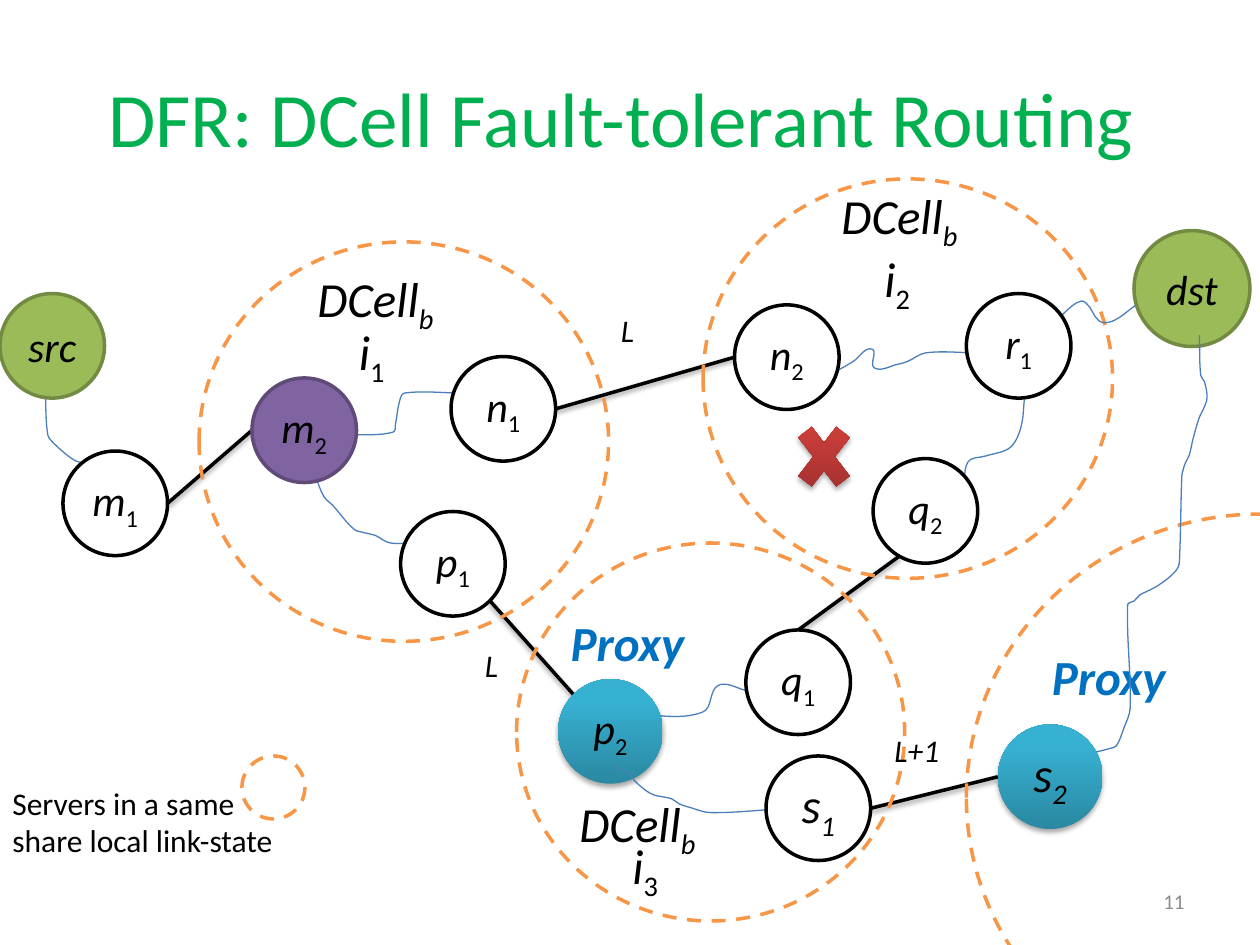
from collections import namedtuple
from math import cos, dist, hypot, radians, sin

from lxml.etree import SubElement
from pptx import Presentation
from pptx.dml.color import RGBColor
from pptx.enum.dml import MSO_LINE_DASH_STYLE as Dash
from pptx.enum.shapes import MSO_CONNECTOR as Connector, MSO_SHAPE as Preset
from pptx.enum.text import MSO_ANCHOR as Anchor, MSO_AUTO_SIZE as AutoSize, PP_ALIGN as Align
from pptx.oxml.ns import qn
from pptx.util import Inches, Pt

Box = namedtuple("Box", "left top width height")
Node = namedtuple("Node", "left top size letter sub style")

COLORS = {
    "title": "00B050", "text": "000000", "proxy": "0070C0", "number": "8C8C8C",
    "ring": "F79646", "route": "4B7EBC", "white": "FFFFFF", "black": "000000",
    "green": "9BBB59", "green_edge": "738A42", "purple": "8064A2", "purple_edge": "5F4A78",
    "teal_low": "2A88A2", "teal_high": "37B1D2", "red_low": "9C2F2D", "red_high": "CB3E3A",
}
STYLES = {
    "plain": ("white", "black"),
    "end": ("green", "green_edge"),
    "fault": ("purple", "purple_edge"),
}
D = 0.83
NODES = {
    "src": Node(0, 2.33, D, "src", "", "end"),
    "dst": Node(9, 1.83, 0.92, "dst", "", "end"),
    "m1": Node(0.5, 3.58, D, "m", "1", "plain"),
    "m2": Node(2, 3, D, "m", "2", "fault"),
    "n1": Node(3.58, 2.83, D, "n", "1", "plain"),
    "n2": Node(5.83, 2.42, D, "n", "2", "plain"),
    "p1": Node(3.18, 4.06, D, "p", "1", "plain"),
    "p2": Node(4.43, 5.39, D, "p", "2", "proxy"),
    "q1": Node(5.92, 5, D, "q", "1", "plain"),
    "q2": Node(6.93, 3.64, D, "q", "2", "plain"),
    "r1": Node(7.67, 2.33, D, "r", "1", "plain"),
    "s1": Node(6.08, 6, D, "s", "1", "plain"),
    "s2": Node(7.92, 5.75, D, "s", "2", "proxy"),
}
LINKS = [
    ("n1", 0, "n2", 180), ("q2", 120, "q1", 270), ("p1", 45, "p2", 225),
    ("m1", 0, "m2", 180), ("s1", 0, "s2", 180),
]
RINGS = [(4.1, 4.31, 3.08, 3), (1.58, 1.92, 3.25, 3.17),
         (5.58, 1.42, 3.25, 3.17), (7.67, 4.08, 4.67, 4.5)]
ROUTES = [
    [(2.5, 3.77), (2.57, 3.94), (2.64, 4.01), (2.81, 4.2), (2.9, 4.23), (2.98, 4.25),
     (3.1, 4.31), (3.4, 4.3)],
    [(7.39, 4.17), (7.61, 4.02), (7.65, 3.95), (7.68, 3.67), (7.82, 3.62), (7.99, 3.57),
     (8.06, 3.5), (8.11, 3.36), (8.13, 3.17)],
    [(4.92, 5.58), (5.13, 5.67), (5.58, 5.65), (5.7, 5.44), (5.92, 5.48), (6.11, 5.53),
     (6.37, 5.48)],
    [(0.36, 3.1), (0.38, 3.45), (0.43, 3.52), (0.57, 3.64), (0.64, 3.67), (0.86, 3.69)],
    [(2.55, 3.31), (2.74, 3.43), (2.81, 3.45), (3.12, 3.43), (3.14, 3.36), (3.17, 3.19),
     (3.21, 3.12), (3.67, 3.12)],
    [(6.56, 2.99), (6.77, 2.87), (6.92, 2.77), (6.94, 2.92), (7.13, 2.89), (7.2, 2.87),
     (7.35, 2.8), (7.75, 2.8)],
    [(8.23, 2.73), (8.25, 2.65), (8.39, 2.56), (8.44, 2.49), (8.58, 2.39), (8.65, 2.44),
     (8.69, 2.51), (8.75, 2.56), (8.85, 2.54), (8.99, 2.44), (9.08, 2.37)],
]
PROXY_ROUTES = [
    [(4.88, 6.08), (5, 6.14), (5.03, 6.19), (5.12, 6.27), (5.19, 6.31), (5.33, 6.34),
     (5.39, 6.38), (5.48, 6.41), (5.64, 6.45), (6.2, 6.42)],
    [(8.42, 6.08), (8.48, 6.03), (8.81, 5.94), (8.86, 5.92), (8.92, 5.78), (8.97, 5.62),
     (8.95, 4.8), (9, 4.77), (9.05, 4.72), (9.09, 4.7), (9.17, 4.66), (9.27, 4.59),
     (9.34, 4.52), (9.36, 4.47), (9.38, 3.78), (9.39, 3.73), (9.41, 3.67), (9.44, 3.61),
     (9.47, 3.48), (9.52, 3.31), (9.55, 3.25), (9.58, 3.16), (9.56, 3.03), (9.53, 2.98),
     (9.52, 2.66)],
]
CELL_LABELS = [((2.42, 2.08), (2.75, 2.5), "1"), ((6.58, 1.42), (6.92, 1.92), "2"),
               ((4.5, 6.25), (4.92, 6.58), "3")]
LEVEL_LABELS = [(4.83, 2.42, 0.42, "L"), (3.75, 5.08, 0.42, "L"), (7, 5.75, 0.92, "L+1")]


def rgb(name):
    return RGBColor.from_string(COLORS[name])


def place(box, left, top, width, height):
    return [Inches(n) for n in (box.left + left, box.top + top, width, height)]


def write(para, parts, size, color="text", bold=False, align=Align.LEFT):
    para.alignment = align
    for text, italic, lowered in parts:
        span = para.add_run()
        span.text = text
        span.font.name = "Calibri"
        span.font.size = Pt(size)
        span.font.bold = bold
        span.font.italic = italic
        span.font.color.rgb = rgb(color)
        if lowered:
            span.font._element.set("baseline", "-25000")


def add_text(page, box, area, lines, size, anchor=Anchor.TOP, **look):
    frame = page.shapes.add_textbox(*place(box, *area)).text_frame
    frame.word_wrap = True
    frame.auto_size = AutoSize.NONE
    frame.vertical_anchor = anchor
    for index, parts in enumerate(lines):
        para = frame.add_paragraph() if index else frame.paragraphs[0]
        write(para, parts, size, **look)


def add_shadow(properties, alpha, distance):
    effects = properties.find(qn("a:effectLst"))
    if effects is None:
        effects = SubElement(properties, qn("a:effectLst"))
    shadow = SubElement(effects, qn("a:outerShdw"), blurRad=str(Pt(3.1)),
                        dist=str(Pt(distance)), dir="5400000", rotWithShape="0")
    color = SubElement(shadow, qn("a:srgbClr"), val=COLORS["black"])
    SubElement(color, qn("a:alpha"), val=str(alpha * 1000))


def fill_glossy(shape, name):
    shape.fill.gradient()
    shape.fill.gradient_angle = 90
    for stop, tone, position in zip(shape.fill.gradient_stops, ("low", "high"), (0, 0.8)):
        stop.color.rgb = rgb(f"{name}_{tone}")
        stop.position = position
    shape.line.fill.background()
    shape.shadow.inherit = False
    add_shadow(shape._element.spPr, 35, 1.8)


def add_ring(page, box, area, filled=False):
    ring = page.shapes.add_shape(Preset.OVAL, *place(box, *area))
    ring.shadow.inherit = False
    if filled:
        ring.fill.solid()
        ring.fill.fore_color.rgb = rgb("white")
    else:
        ring.fill.background()
    ring.line.color.rgb = rgb("ring")
    ring.line.width = Pt(2)
    ring.line.dash_style = Dash.DASH


def add_node(page, box, node):
    circle = page.shapes.add_shape(
        Preset.OVAL, *place(box, node.left, node.top, node.size, node.size))
    if node.style == "proxy":
        fill_glossy(circle, "teal")
    else:
        fill, edge = STYLES[node.style]
        circle.shadow.inherit = False
        circle.fill.solid()
        circle.fill.fore_color.rgb = rgb(fill)
        circle.line.color.rgb = rgb(edge)
        circle.line.width = Pt(2)
    frame = circle.text_frame
    frame.margin_left = frame.margin_right = 0
    frame.vertical_anchor = Anchor.MIDDLE
    is_s = node.letter == "s"
    parts = [(node.letter, True, False)] + ([(node.sub, is_s, True)] if node.sub else [])
    write(frame.paragraphs[0], parts, 28 if is_s else 24, align=Align.CENTER)


def rim(box, node, degrees):
    radius, angle = node.size / 2, radians(degrees)
    return (Inches(box.left + node.left + radius * (1 + cos(angle))),
            Inches(box.top + node.top + radius * (1 + sin(angle))))


def add_link(page, box, start, start_angle, end, end_angle):
    link = page.shapes.add_connector(Connector.STRAIGHT, *rim(box, NODES[start], start_angle),
                                     *rim(box, NODES[end], end_angle))
    link.line.color.rgb = rgb("black")
    link.line.width = Pt(2)
    add_shadow(link._element.spPr, 38, 1.6)


def curve(outline):
    points = [(int(pt.get("x")), int(pt.get("y"))) for pt in outline.iter(qn("a:pt"))]
    padded = [points[0], *points, points[-1]]
    headings = []
    for (x1, y1), (x2, y2) in zip(padded, padded[2:]):
        span = hypot(x2 - x1, y2 - y1)
        headings.append(((x2 - x1) / span, (y2 - y1) / span))
    for segment in outline.findall(qn("a:lnTo")):
        outline.remove(segment)
    for a, b, u, v in zip(points, points[1:], headings, headings[1:]):
        reach = dist(a, b) / 3
        segment = SubElement(outline, qn("a:cubicBezTo"))
        for x, y in ((a[0] + reach * u[0], a[1] + reach * u[1]),
                     (b[0] - reach * v[0], b[1] - reach * v[1]), b):
            SubElement(segment, qn("a:pt"), x=str(round(x)), y=str(round(y)))


def add_route(page, box, points):
    moved = [(Inches(box.left + x), Inches(box.top + y)) for x, y in points]
    builder = page.shapes.build_freeform(*moved[0])
    builder.add_line_segments(moved[1:], close=False)
    route = builder.convert_to_shape()
    curve(next(route._element.iter(qn("a:path"))))
    route.shadow.inherit = False
    route.fill.background()
    route.line.color.rgb = rgb("route")
    route.line.width = Pt(0.75)


def draw_title(page, box):
    add_text(page, box, (0, 0, box.width, box.height),
             [[("DFR: DCell Fault-tolerant Routing ", False, False)]], 44,
             Anchor.MIDDLE, color="title", align=Align.CENTER)


def draw_network(page, box):
    for link in LINKS:
        add_link(page, box, *link)
    for area in RINGS:
        add_ring(page, box, area)
    for points in ROUTES:
        add_route(page, box, points)
    for node in NODES.values():
        if node.letter != "s":
            add_node(page, box, node)
    for left, top in ((4.43, 4.81), (8.25, 5.08)):
        add_text(page, box, (left, top, 1.75, 0.57), [[("Proxy", True, False)]], 28,
                 color="proxy", bold=True)
    for points in PROXY_ROUTES:
        add_route(page, box, points)
    for name in ("s2", "s1"):
        add_node(page, box, NODES[name])
    for cell, index, number in CELL_LABELS:
        add_text(page, box, (*cell, 1.58, 0.57), [[("DCell", True, False), ("b", True, True)]], 28)
        add_text(page, box, (*index, 0.58, 0.57), [[("i", True, False), (number, False, True)]], 28)
    for left, top, width, text in LEVEL_LABELS:
        add_text(page, box, (left, top, width, 0.4), [[(text, True, False)]], 18)
    cross = page.shapes.add_shape(Preset.MATH_MULTIPLY, *place(box, 6.25, 3.25, 0.58, 0.75))
    fill_glossy(cross, "red")


def draw_legend(page, box):
    lines = ("Servers in a same", "share local link-state")
    add_text(page, box, (0, 0.17, box.width, 0.71), [[(line, False, False)] for line in lines], 18)
    add_ring(page, box, (1.92, 0, 0.5, 0.5), filled=True)


def draw_number(page, box):
    add_text(page, box, (0, 0, box.width, box.height), [[("11", False, False)]], 12,
             Anchor.MIDDLE, color="number", align=Align.RIGHT)


def main():
    deck = Presentation()
    deck.slide_width, deck.slide_height = Inches(10), Inches(7.5)
    page = deck.slides.add_slide(deck.slide_layouts[6])
    draw_title(page, Box(0.5, 0.3, 9, 1.25))
    draw_network(page, Box(0, 0, 10, 7.5))
    draw_legend(page, Box(0, 6, 3.17, 0.88))
    draw_number(page, Box(7.17, 6.95, 2.33, 0.4))
    deck.save("out.pptx")


if __name__ == "__main__":
    main()
